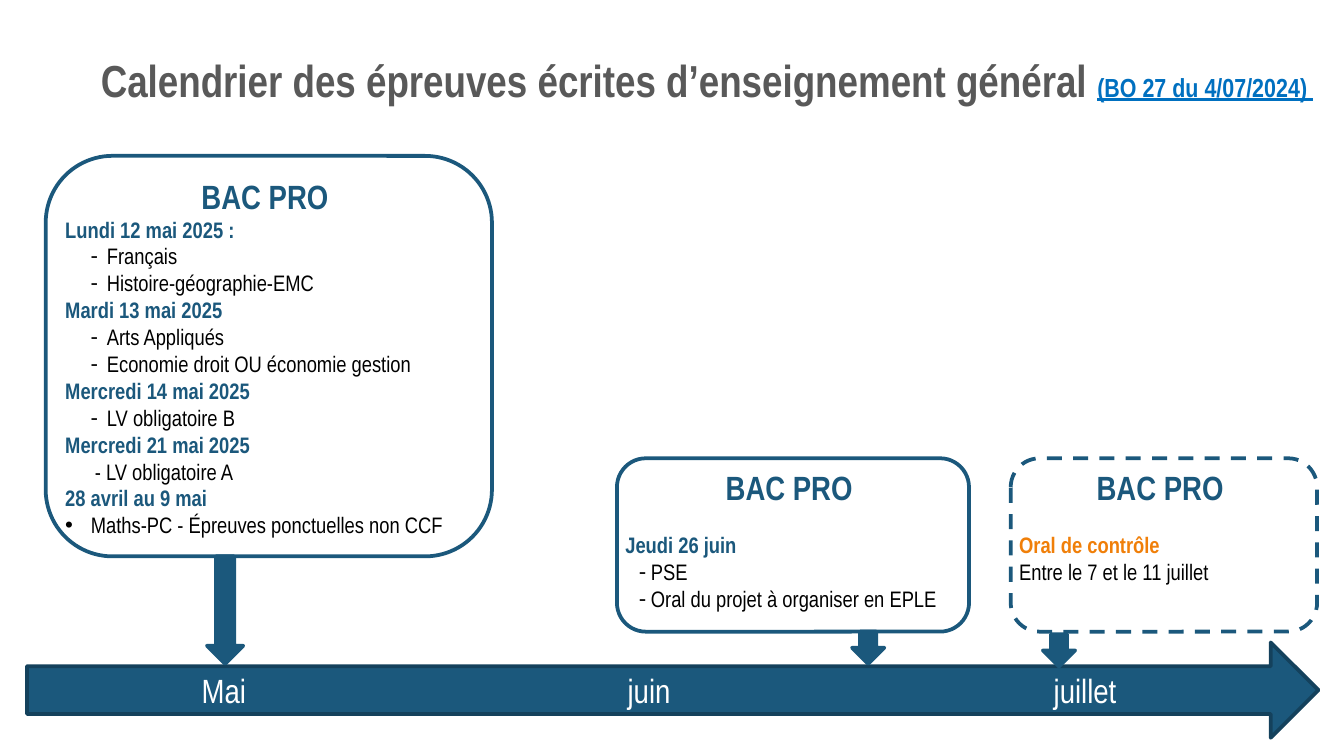
from lxml import etree
from pptx import Presentation
from pptx.dml.color import RGBColor
from pptx.enum.dml import MSO_LINE
from pptx.enum.shapes import MSO_SHAPE
from pptx.enum.text import MSO_ANCHOR, PP_ALIGN
from pptx.oxml.ns import qn
from pptx.util import Inches, Pt

ROUNDED, DOWN, RIGHT = MSO_SHAPE.ROUNDED_RECTANGLE, MSO_SHAPE.DOWN_ARROW, MSO_SHAPE.RIGHT_ARROW
LEFT, CENTER = PP_ALIGN.LEFT, PP_ALIGN.CENTER
TOP, MIDDLE = MSO_ANCHOR.TOP, MSO_ANCHOR.MIDDLE
FONT = "Arial Narrow"
COLORS = {"blue": "1B587C", "navy": "14415C", "grey": "595959", "link": "0070C0",
          "orange": "F07F09", "black": "000000", "white": "FFFFFF"}

TITLE = [("Calendrier des épreuves écrites d’enseignement général ", 24, "grey", False),
         ("(BO 27 du 4/07/2024) ", 14, "link", True)]
MONTHS = ["Mai", "juin", "juillet"]
MONTH_START, MONTH_STEP = 1.3, 3.17

# Line styles: color, bold, bullet, left margin, hanging indent
STYLES = {
    "date": ("blue", True, None, 0, 0),
    "oral": ("orange", True, None, 0, 0),
    "plain": ("black", False, None, 0, 0),
    "inset": ("black", False, None, 0.22, 0),
    "exam": ("black", False, "-", 0.31, 0.12),
    "close": ("black", False, "-", 0.19, 0.09),
    "dot": ("black", False, "•", 0.19, 0.19),
}
HEADING = "BAC PRO "
CARDS = [
    {"box": (0.34, 1.16, 3.32, 2.98), "gap": 0, "dashed": False, "arrow": (1.54, 4.14, 0.27, 0.8),
     "lines": [("date", "Lundi 12 mai 2025 :"), ("exam", "Français"),
               ("exam", "Histoire-géographie-EMC"),
               ("date", "Mardi 13 mai 2025"), ("exam", "Arts Appliqués"),
               ("exam", "Economie droit OU économie gestion"),
               ("date", "Mercredi 14 mai 2025"), ("exam", "LV obligatoire B"),
               ("date", "Mercredi 21 mai 2025"), ("inset", "- LV obligatoire A"),
               ("date", "28 avril au 9 mai"),
               ("dot", "Maths-PC - Épreuves ponctuelles non CCF")]},
    {"box": (4.59, 3.41, 2.62, 1.29), "gap": 13, "dashed": False, "arrow": (6.34, 4.7, 0.24, 0.24),
     "lines": [("date", "Jeudi 26 juin"), ("close", "PSE"),
               ("close", "Oral du projet à organiser en EPLE")]},
    {"box": (7.52, 3.41, 2.28, 1.29), "gap": 13, "dashed": True, "arrow": (7.76, 4.72, 0.24, 0.24),
     "lines": [("oral", "Oral de contrôle"), ("plain", "Entre le 7 et le 11 juillet")]},
]


def rgb(name):
    return RGBColor.from_string(COLORS[name])


def set_font(font, size, color, bold):
    font.name, font.size, font.bold = FONT, Pt(size), bold
    font.color.rgb = rgb(color)


def add_figure(slide, kind, box, fill, line="blue"):
    shape = slide.shapes.add_shape(kind, *map(Inches, box))
    shape.shadow.inherit = False
    shape.fill.solid()
    shape.fill.fore_color.rgb = rgb(fill)
    shape.line.color.rgb = rgb(line)
    shape.line.width = Pt(2)
    return shape


def clear_margins(frame):
    frame.margin_left = frame.margin_top = frame.margin_right = frame.margin_bottom = 0


def indent(paragraph, bullet, margin, hanging):
    properties = paragraph._p.get_or_add_pPr()
    properties.set("marL", str(Inches(margin)))
    properties.set("indent", str(-Inches(hanging)))
    if bullet:
        etree.SubElement(properties, qn("a:buFont")).set("typeface", "Arial")
        etree.SubElement(properties, qn("a:buChar")).set("char", bullet)


def add_title(slide):
    title = slide.shapes.title
    title.left, title.top, title.width, title.height = map(Inches, (0.75, 0.43, 9.45, 0.38))
    frame = title.text_frame
    clear_margins(frame)
    frame.vertical_anchor = MIDDLE
    paragraph = frame.paragraphs[0]
    paragraph.alignment, paragraph.line_spacing = LEFT, 0.9
    for text, size, color, underlined in TITLE:
        run = paragraph.add_run()
        run.text = text
        set_font(run.font, size, color, True)
        run.font.underline = underlined


def add_card(slide, card):
    shape = add_figure(slide, ROUNDED, card["box"], "white")
    if card["dashed"]:
        shape.line.dash_style = MSO_LINE.DASH
    frame = shape.text_frame
    clear_margins(frame)
    frame.word_wrap, frame.vertical_anchor = True, TOP
    heading = frame.paragraphs[0]
    heading.text, heading.alignment = HEADING, CENTER
    set_font(heading.font, 18, "blue", True)
    for index, (style, text) in enumerate(card["lines"]):
        color, bold, bullet, margin, hanging = STYLES[style]
        paragraph = frame.add_paragraph()
        paragraph.text, paragraph.alignment = text, LEFT
        if index == 0:
            paragraph.space_before = Pt(card["gap"])
        indent(paragraph, bullet, margin, hanging)
        set_font(paragraph.font, 12, color, bold)
    add_figure(slide, DOWN, card["arrow"], "blue")


def add_timeline(slide):
    """Draw the arrow with the months on evenly spaced tab stops."""
    shape = add_figure(slide, RIGHT, (0.2, 4.78, 9.61, 0.71), "blue", "navy")
    frame = shape.text_frame
    frame.margin_left = Inches(MONTH_START)
    frame.word_wrap, frame.vertical_anchor = True, MIDDLE
    paragraph = frame.paragraphs[0]
    paragraph.text, paragraph.alignment = "\t".join(MONTHS), LEFT
    tabs = etree.SubElement(paragraph._p.get_or_add_pPr(), qn("a:tabLst"))
    for index in range(1, len(MONTHS)):
        tab = etree.SubElement(tabs, qn("a:tab"))
        tab.set("pos", str(Inches(MONTH_STEP * index)))
        tab.set("algn", "l")
    set_font(paragraph.font, 18, "white", False)


def main():
    presentation = Presentation()
    presentation.slide_width = Inches(10)
    presentation.slide_height = presentation.slide_width * 9 // 16
    slide = presentation.slides.add_slide(presentation.slide_layouts.get_by_name("Title Only"))
    add_title(slide)
    add_timeline(slide)
    for card in CARDS:
        add_card(slide, card)
    presentation.save("out.pptx")


if __name__ == "__main__":
    main()
